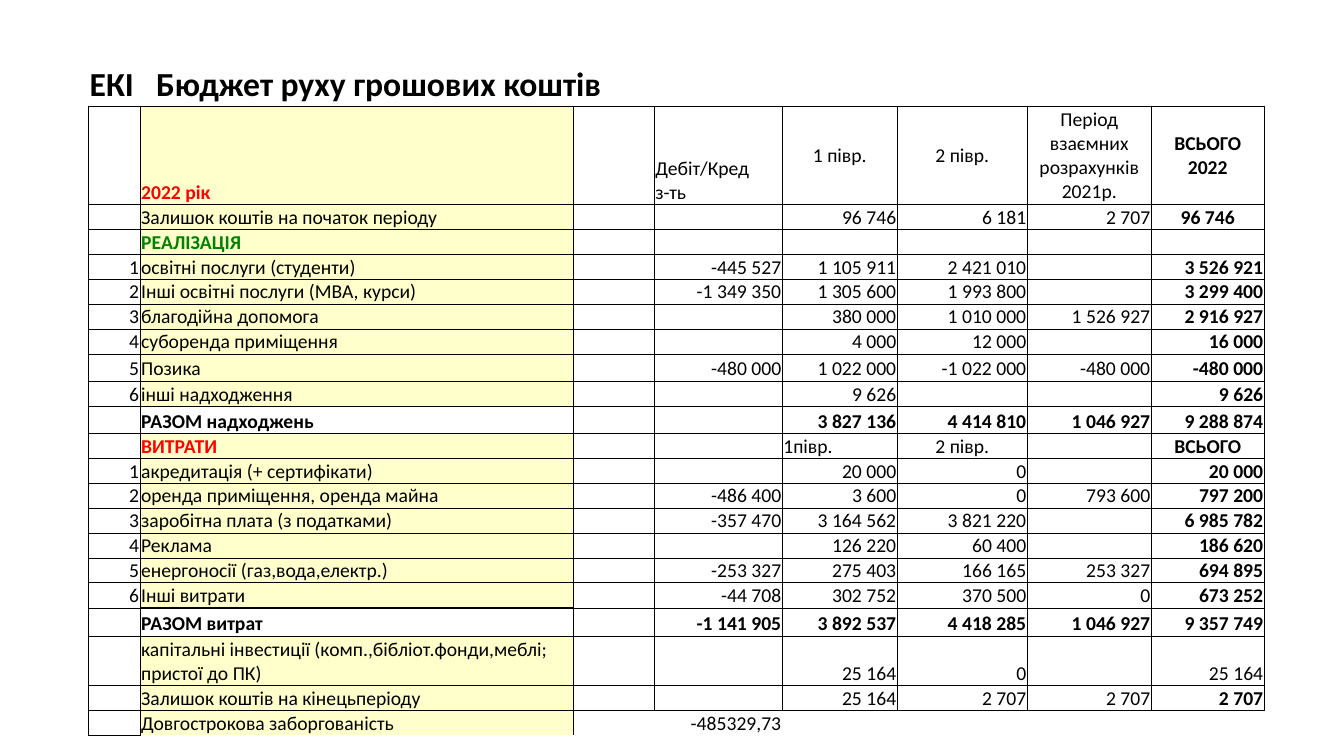
import dataclasses

import lxml.etree
import pptx
import pptx.dml.color
import pptx.enum.text
import pptx.oxml.ns
import pptx.util

COLORS = {"ink": "000000", "red": "FF0000", "green": "008000", "cream": "FFFFCC"}
FONT = "Calibri"
GRID_W, GRID_H = 1333, 750
COLUMNS = (51, 430, 80, 127, 114, 129, 123, 112)
LEFT, TOP = 88, 55
NO_GRID_STYLE = "{2D5ABB26-0587-4C30-8999-92F81FD0307C}"
LABEL, SPACER, DEBT, HALF_1, HALF_2, MUTUAL, TOTAL = range(1, 8)
A = pptx.enum.text.PP_ALIGN
V = pptx.enum.text.MSO_ANCHOR


@dataclasses.dataclass(frozen=True)
class Row:
    label: str
    number: str = ""
    debt: str = ""
    half_1: str = ""
    half_2: str = ""
    mutual: str = ""
    total: str = ""
    height: int = 24
    kind: str = "item"
    color: str = "ink"
    anchor: V = V.BOTTOM

    def texts(self) -> tuple[str, ...]:
        return (self.number, self.label, "", self.debt, self.half_1,
                self.half_2, self.mutual, self.total)


MID = V.MIDDLE
ROWS = (
    Row("Бюджет руху грошових коштів", "ЕКІ", height=50, kind="title"),
    Row("2022 рік", "", "Дебіт/Кред\nз-ть", "1 півр.", "2 півр.",
        "Період взаємних розрахунків 2021р.", "ВСЬОГО 2022", 98, "header", "red"),
    Row("Залишок коштів на початок періоду", "", "", "96 746", "6 181", "2 707",
        "96 746", kind="opening"),
    Row("РЕАЛІЗАЦІЯ", kind="section", color="green"),
    Row("освітні послуги (студенти)", "1", "-445 527", "1 105 911", "2 421 010", "", "3 526 921"),
    Row("Інші освітні послуги (МВА, курси)", "2", "-1 349 350", "1 305 600", "1 993 800", "",
        "3 299 400"),
    Row("благодійна допомога", "3", "", "380 000", "1 010 000", "1 526 927", "2 916 927"),
    Row("суборенда приміщення", "4", "", "4 000", "12 000", "", "16 000"),
    Row("Позика", "5", "-480 000", "1 022 000", "-1 022 000", "-480 000", "-480 000", 27),
    Row("інші надходження", "6", "", "9 626", "", "", "9 626", 25, "last income"),
    Row("РАЗОМ надходжень", "", "", "3 827 136", "4 414 810", "1 046 927", "9 288 874", 27,
        "income sum"),
    Row("ВИТРАТИ", "", "", "1півр.", "2 півр.", "", "ВСЬОГО", kind="section", color="red"),
    Row("акредитація (+ сертифікати)", "1", "", "20 000", "0", "", "20 000", anchor=MID),
    Row("оренда приміщення, оренда майна", "2", "-486 400", "3 600", "0", "793 600", "797 200",
        anchor=MID),
    Row("заробітна плата (з податками)", "3", "-357 470", "3 164 562", "3 821 220", "",
        "6 985 782", anchor=MID),
    Row("Реклама", "4", "", "126 220", "60 400", "", "186 620", anchor=MID),
    Row("енергоносії (газ,вода,електр.)", "5", "-253 327", "275 403", "166 165", "253 327",
        "694 895", anchor=MID),
    Row("Інші витрати", "6", "-44 708", "302 752", "370 500", "0", "673 252", 25,
        "last cost", anchor=MID),
    Row("РАЗОМ витрат", "", "-1 141 905", "3 892 537", "4 418 285", "1 046 927", "9 357 749", 28,
        "cost sum"),
    Row("капітальні інвестиції (комп.,бібліот.фонди,меблі; пристої до ПК)", "", "",
        "25 164", "0", "", "25 164", 49, "investment", anchor=MID),
    Row("Залишок коштів на кінецьперіоду", "", "", "25 164", "2 707", "2 707", "2 707",
        kind="closing", anchor=MID),
    Row("Довгострокова заборгованість", "", "-485329,73", kind="long debt", anchor=MID),
)


def is_bold(row: Row, col: int) -> bool:
    if row.kind in ("title", "income sum", "cost sum"):
        return True
    if col == LABEL:
        return row.kind in ("header", "section")
    return col == TOTAL and row.kind != "investment"


def alignment(row: Row, col: int) -> A:
    if row.kind == "title" or col == LABEL:
        return A.LEFT
    if row.kind == "header":
        return A.LEFT if col == DEBT else A.CENTER
    if row.kind == "section" and col == HALF_1:
        return A.LEFT
    if row.kind == "section" and col in (HALF_2, TOTAL):
        return A.CENTER
    if row.kind == "opening" and col == TOTAL:
        return A.CENTER
    return A.RIGHT


def anchor(row: Row, col: int) -> V:
    if col == LABEL:
        return row.anchor
    if row.kind == "header" and col >= HALF_1:
        return MID
    if row.kind in ("opening", "section") and col == TOTAL and row.total:
        return MID
    return V.BOTTOM


def borders(row: Row, col: int) -> dict[str, float]:
    if row.kind == "title":
        return {} if col == SPACER else {"B": 0.5}
    if row.kind == "long debt" and col > 0:
        return {"L": 0.5, "T": 0.5} if col == LABEL else {"T": 0.5}
    sides = dict.fromkeys("LRTB", 0.5)
    open_label = row.kind not in ("investment", "closing")
    if open_label and col in (LABEL, SPACER):
        del sides["R" if col == LABEL else "L"]
    if col in (LABEL, SPACER, DEBT, MUTUAL):
        if row.kind == "last income":
            sides["B"] = 1
        if row.kind == "income sum":
            sides["T"] = 1
    if col in (LABEL, SPACER, DEBT):
        if row.kind == "income sum":
            del sides["B"]
        if row.label == "ВИТРАТИ":
            del sides["T"]
    if col == LABEL and row.kind == "last cost":
        sides["B"] = 1
    if col == LABEL and row.kind == "cost sum":
        sides["T"] = 1
    return sides


def draw_borders(cell: pptx.table._Cell, sides: dict[str, float]) -> None:
    qn = pptx.oxml.ns.qn
    tcPr = cell._tc.get_or_add_tcPr()
    for side, width in sides.items():
        ln = lxml.etree.SubElement(tcPr, qn(f"a:ln{side}"), w=str(pptx.util.Pt(width)))
        fill = lxml.etree.SubElement(ln, qn("a:solidFill"))
        lxml.etree.SubElement(fill, qn("a:srgbClr"), val=COLORS["ink"])


def draw_cell(cell: pptx.table._Cell, row: Row, col: int, text: str) -> None:
    draw_borders(cell, borders(row, col))
    if col == LABEL and row.kind not in ("title", "income sum", "cost sum"):
        cell.fill.solid()
        cell.fill.fore_color.rgb = pptx.dml.color.RGBColor.from_string(COLORS["cream"])
    else:
        cell.fill.background()
    indent = 0.16 if row.kind == "title" and col == LABEL else 0.01
    cell.margin_left = pptx.util.Inches(indent)
    cell.margin_right = cell.margin_top = pptx.util.Inches(0.01)
    cell.margin_bottom = 0
    cell.vertical_anchor = anchor(row, col)
    p = cell.text_frame.paragraphs[0]
    p.alignment = alignment(row, col)
    if not text:
        lxml.etree.SubElement(p._p, pptx.oxml.ns.qn("a:endParaRPr"), sz="1400")
        return
    for i, part in enumerate(text.split("\n")):
        if i:
            p.add_line_break()
        r = p.add_run()
        r.text = part
        r.font.name = FONT
        r.font.size = pptx.util.Pt(24 if row.kind == "title" else 14)
        r.font.bold = is_bold(row, col)
        color = row.color if col == LABEL else "ink"
        r.font.color.rgb = pptx.dml.color.RGBColor.from_string(COLORS[color])


def main() -> None:
    prs = pptx.Presentation()
    prs.slide_width = pptx.util.Inches(13.33)
    prs.slide_height = pptx.util.Inches(7.5)
    unit_x, unit_y = prs.slide_width // GRID_W, prs.slide_height // GRID_H
    s = prs.slides.add_slide(prs.slide_layouts[6])
    sp = s.shapes.add_table(
        len(ROWS), len(COLUMNS), LEFT * unit_x, TOP * unit_y,
        sum(COLUMNS) * unit_x, sum(row.height for row in ROWS) * unit_y)
    tbl = sp.table
    tbl.first_row = tbl.horz_banding = False
    tbl._tbl.tblPr.find(pptx.oxml.ns.qn("a:tableStyleId")).text = NO_GRID_STYLE
    for column, width in zip(tbl.columns, COLUMNS):
        column.width = width * unit_x
    for i, row in enumerate(ROWS):
        tbl.rows[i].height = row.height * unit_y
        for col, text in enumerate(row.texts()):
            draw_cell(tbl.cell(i, col), row, col, text)
    tbl.cell(0, LABEL).merge(tbl.cell(0, SPACER))
    prs.save("out.pptx")


if __name__ == "__main__":
    main()
